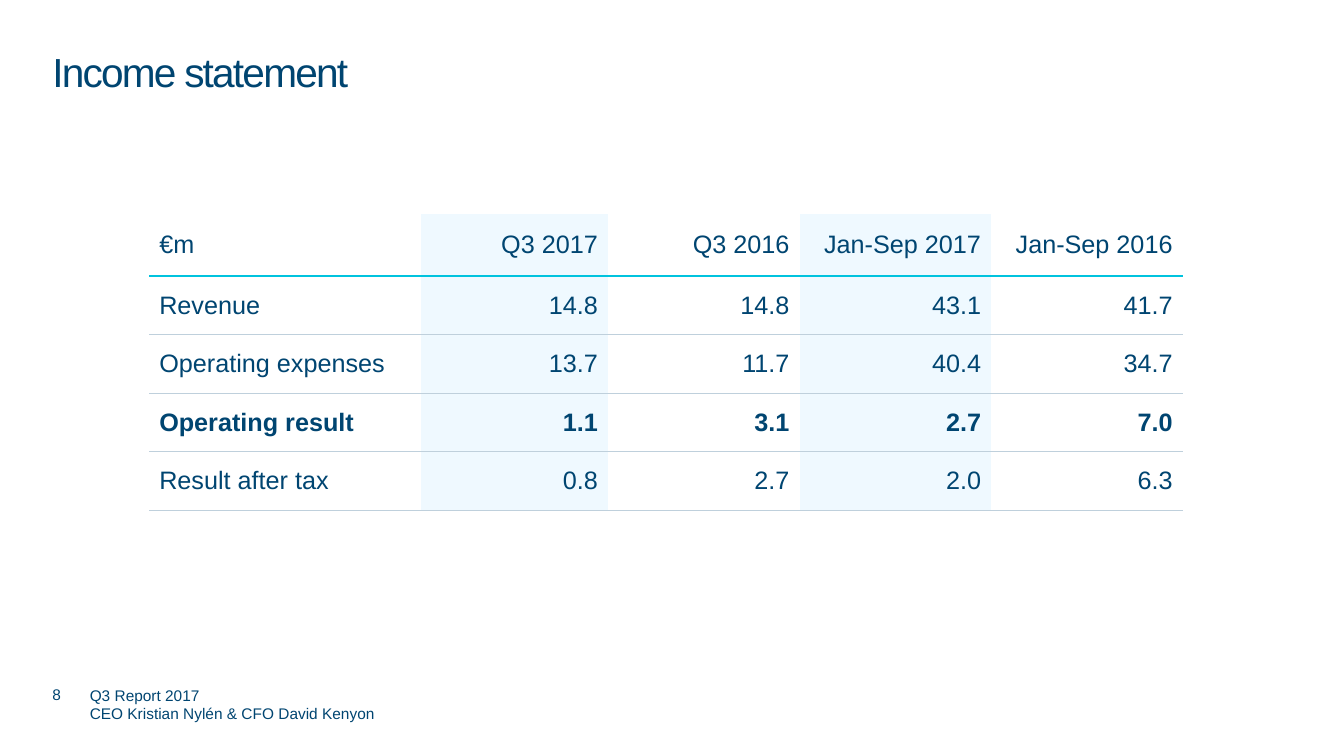
from lxml import etree
from pptx import Presentation
from pptx.dml.color import RGBColor
from pptx.enum.text import MSO_ANCHOR, PP_ALIGN
from pptx.oxml.ns import qn
from pptx.util import Inches, Pt

TOP, MID, LOW = MSO_ANCHOR.TOP, MSO_ANCHOR.MIDDLE, MSO_ANCHOR.BOTTOM
LEFT, RIGHT = PP_ALIGN.LEFT, PP_ALIGN.RIGHT

TITLE = "Income statement"
FOOTER = ["Q3 Report 2017", "CEO Kristian Nylén & CFO David Kenyon"]
PAGE = "8"
ROWS = [
    ("€m", "Q3 2017", "Q3 2016", "Jan-Sep 2017", "Jan-Sep 2016"),
    ("Revenue", "14.8", "14.8", "43.1", "41.7"),
    ("Operating expenses", "13.7", "11.7", "40.4", "34.7"),
    ("Operating result", "1.1", "3.1", "2.7", "7.0"),
    ("Result after tax", "0.8", "2.7", "2.0", "6.3"),
]
BOLD = "Operating result"
WIDTHS = [2.7, 1.85, 1.9, 1.9, 1.9]
HEAD, BODY = 0.62, 0.58
COLORS = {"text": "004571", "tint": "EFF9FF", "head": "00C3DE", "rule": "BFD0DC"}
THICK, THIN = ("head", 1.5), ("rule", 0.5)


def write(frame, lines, size, bold=False, align=LEFT, space=None, track=None):
    for i, line in enumerate(lines):
        para = frame.paragraphs[0] if i == 0 else frame.add_paragraph()
        para.alignment = align
        if space:
            para.line_spacing = space
        run = para.add_run()
        run.text = line
        font = run.font
        font.name, font.size, font.bold = "Arial", Pt(size), bold
        font.color.rgb = RGBColor.from_string(COLORS["text"])
        if track:
            run._r.get_or_add_rPr().set("spc", str(int(track * 100)))


def add_box(slide, place, lines, anchor=TOP, **style):
    frame = slide.shapes.add_textbox(*map(Inches, place)).text_frame
    frame.word_wrap = True
    frame.vertical_anchor = anchor
    frame.margin_left = frame.margin_right = 0
    frame.margin_top = frame.margin_bottom = 0
    write(frame, lines, **style)


def add_edge(cell, side, edge):
    line = etree.SubElement(cell._tc.get_or_add_tcPr(), qn("a:ln" + side))
    if edge is None:
        line.set("w", "0")
        etree.SubElement(line, qn("a:noFill"))
        return
    color, width = edge
    line.set("w", str(Pt(width)))
    fill = etree.SubElement(line, qn("a:solidFill"))
    etree.SubElement(fill, qn("a:srgbClr")).set("val", COLORS[color])


def add_grid(slide):
    high = HEAD + BODY * (len(ROWS) - 1)
    place = map(Inches, (1.48, 2.12, sum(WIDTHS), high))
    table = slide.shapes.add_table(len(ROWS), len(WIDTHS), *place).table
    table.first_row = table.horz_banding = False
    for col, width in zip(table.columns, WIDTHS):
        col.width = Inches(width)
    edges = [None, THICK] + [THIN] * (len(ROWS) - 1)
    for r, row in enumerate(ROWS):
        table.rows[r].height = Inches(BODY if r else HEAD)
        for c, text in enumerate(row):
            cell = table.cell(r, c)
            cell.vertical_anchor = MID
            write(cell.text_frame, [text], 18, bold=row[0] == BOLD,
                  align=RIGHT if c else LEFT)
            for side, edge in zip("LRTB", (None, None, edges[r], edges[r + 1])):
                add_edge(cell, side, edge)
            if c % 2:
                cell.fill.solid()
                cell.fill.fore_color.rgb = RGBColor.from_string(COLORS["tint"])
            else:
                cell.fill.background()


def main():
    deck = Presentation()
    deck.slide_width, deck.slide_height = Inches(13.33), Inches(7.5)
    slide = deck.slides.add_slide(deck.slide_layouts[6])
    add_box(slide, (0.52, 0.52, 10.5, 0.37), [TITLE], size=29, space=0.9, track=-1.3)
    add_box(slide, (0.89, 6.96, 5.25, 0.21), FOOTER, anchor=LOW, size=11)
    add_box(slide, (0.52, 6.77, 0.37, 0.21), [PAGE], anchor=LOW, size=11)
    add_grid(slide)
    deck.save("out.pptx")


if __name__ == "__main__":
    main()
